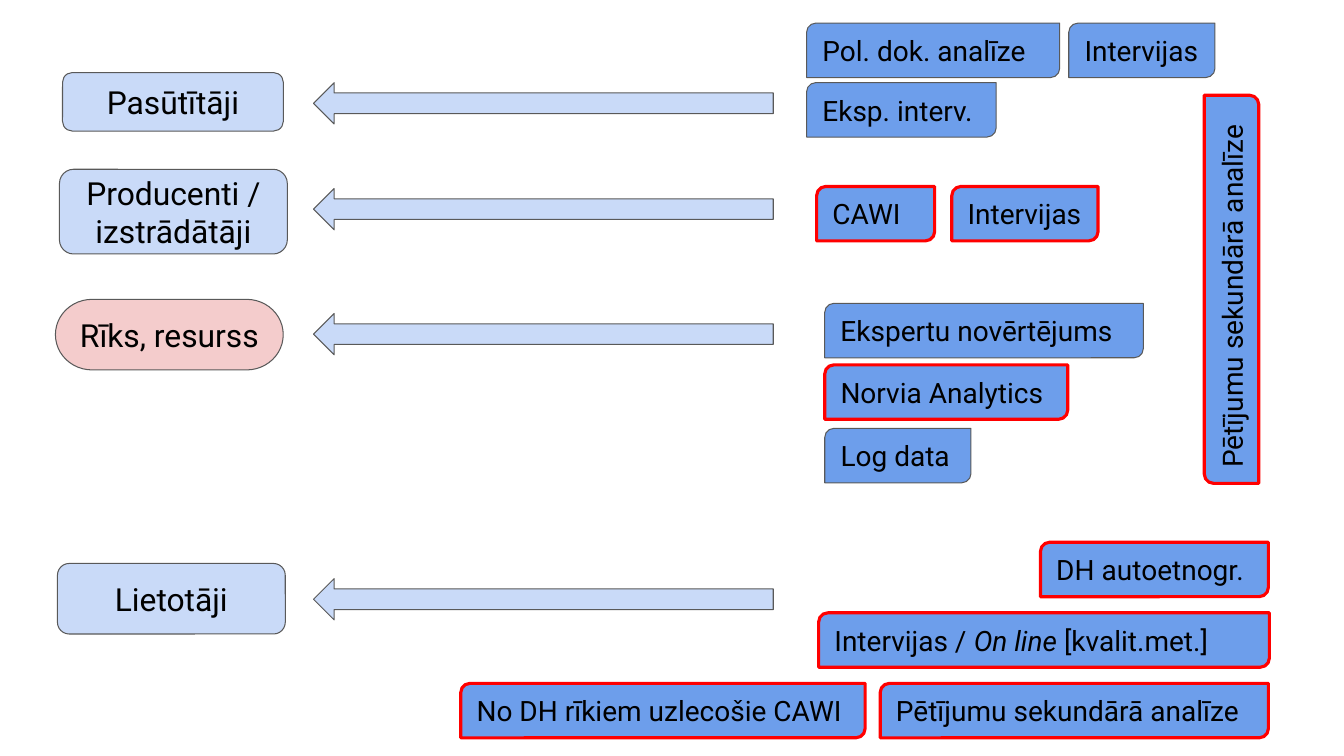
from pptx import Presentation
from pptx.dml.color import RGBColor
from pptx.enum import shapes, text
from pptx.util import Inches, Pt

COLORS = {"pale": "C9DAF8", "pink": "F4CCCC", "blue": "6D9EEB",
          "gray": "595959", "red": "FF0000", "black": "000000"}
FONT = "Roboto"
PRESET = shapes.MSO_SHAPE
ROW_LEFT = 0.55
ARROW_OFFSET, ARROW_WIDTH, ARROW_HEIGHT = 2.56, 4.56, 0.41
METHOD_HEIGHT = 0.54

STAGES = [
    {"top": 0.23, "arrow": 0.59, "actor": ("Pasūtītāji", 0.07, 0.49, 2.19, 0.58),
     "methods": [(["Pol. dok. analīze"], 7.45, 0, 2.51, False),
                 (["Intervijas"], 10.05, 0, 1.45, False),
                 (["Eksp. interv."], 7.45, 0.59, 1.88, False)]},
    {"top": 1.68, "arrow": 0.19, "actor": ("Producenti / izstrādātāji", 0.04, 0, 2.26, 0.84),
     "methods": [(["CAWI"], 7.55, 0.17, 1.17, True),
                 (["Intervijas"], 8.89, 0.17, 1.45, True)]},
    {"top": 2.97, "arrow": 0.14, "actor": ("Rīks, resurss", 0, 0, 2.26, 0.7),
     "actor_preset": PRESET.FLOWCHART_TERMINATOR, "actor_fill": "pink",
     "methods": [(["Ekspertu novērtējums"], 7.63, 0.04, 3.16, False),
                 (["Norvia Analytics"], 7.63, 0.65, 2.41, True),
                 (["Log data"], 7.63, 1.28, 1.45, False)]},
    {"top": 5.38, "arrow": 0.36, "actor": ("Lietotāji", 0.02, 0.21, 2.26, 0.7),
     "methods": [(["DH autoetnogr."], 9.77, 0, 2.26, True),
                 (["Intervijas / ", "On line", " [kvalit.met.]"], 7.57, 0.7, 4.47, True),
                 (["No DH rīkiem uzlecošie CAWI"], 4.02, 1.4, 4.01, True),
                 (["Pētījumu sekundārā analīze"], 8.18, 1.4, 3.85, True)]},
]


def rgb(name):
    return RGBColor.from_string(COLORS[name])


def add_outlined(slide, preset, box, fill, highlighted=False):
    outlined = slide.shapes.add_shape(preset, *map(Inches, box))
    outlined.shadow.inherit = False
    outlined.fill.solid()
    outlined.fill.fore_color.rgb = rgb(fill)
    outlined.line.color.rgb = rgb("red" if highlighted else "gray")
    outlined.line.width = Pt(2.25 if highlighted else 0.75)
    return outlined


def write_label(holder, parts, size, align):
    frame = holder.text_frame
    frame.word_wrap = True
    frame.vertical_anchor = text.MSO_ANCHOR.MIDDLE
    frame.margin_left = frame.margin_right = Inches(0.13)
    frame.margin_top = frame.margin_bottom = Inches(0.13)
    paragraph = frame.paragraphs[0]
    paragraph.alignment = align
    for part in parts:
        run = paragraph.add_run()
        run.text = part
        run.font.name = FONT
        run.font.size = Pt(size)
        run.font.italic = part == "On line"
        run.font.color.rgb = rgb("black")


def add_method(slide, box, parts, highlighted):
    method = add_outlined(slide, PRESET.ROUND_2_DIAG_RECTANGLE, box, "blue", highlighted)
    method.adjustments[0] = 0.167
    method.adjustments[1] = 0
    write_label(method, parts, 20, text.PP_ALIGN.LEFT)
    return method


def add_stage(slide, left, top, stage):
    name, dx, dy, width, height = stage["actor"]
    actor = add_outlined(slide, stage.get("actor_preset", PRESET.ROUNDED_RECTANGLE),
                         (left + dx, top + dy, width, height),
                         stage.get("actor_fill", "pale"))
    write_label(actor, [name], 22.7, text.PP_ALIGN.CENTER)
    add_outlined(slide, PRESET.LEFT_ARROW,
                 (left + ARROW_OFFSET, top + stage["arrow"], ARROW_WIDTH, ARROW_HEIGHT),
                 "pale")
    for parts, dx, dy, width, highlighted in stage["methods"]:
        add_method(slide, (left + dx, top + dy, width, METHOD_HEIGHT), parts, highlighted)


def main():
    deck = Presentation()
    deck.slide_width = Inches(13.33)
    deck.slide_height = Inches(7.5)
    slide = deck.slides.add_slide(deck.slide_layouts[6])
    for stage in STAGES:
        add_stage(slide, ROW_LEFT, stage["top"], stage)
    secondary_analysis = add_method(slide, (10.29, 2.6, 3.85, METHOD_HEIGHT),
                                    ["Pētījumu sekundārā analīze"], True)
    secondary_analysis.rotation = 270
    deck.save("out.pptx")


if __name__ == "__main__":
    main()
